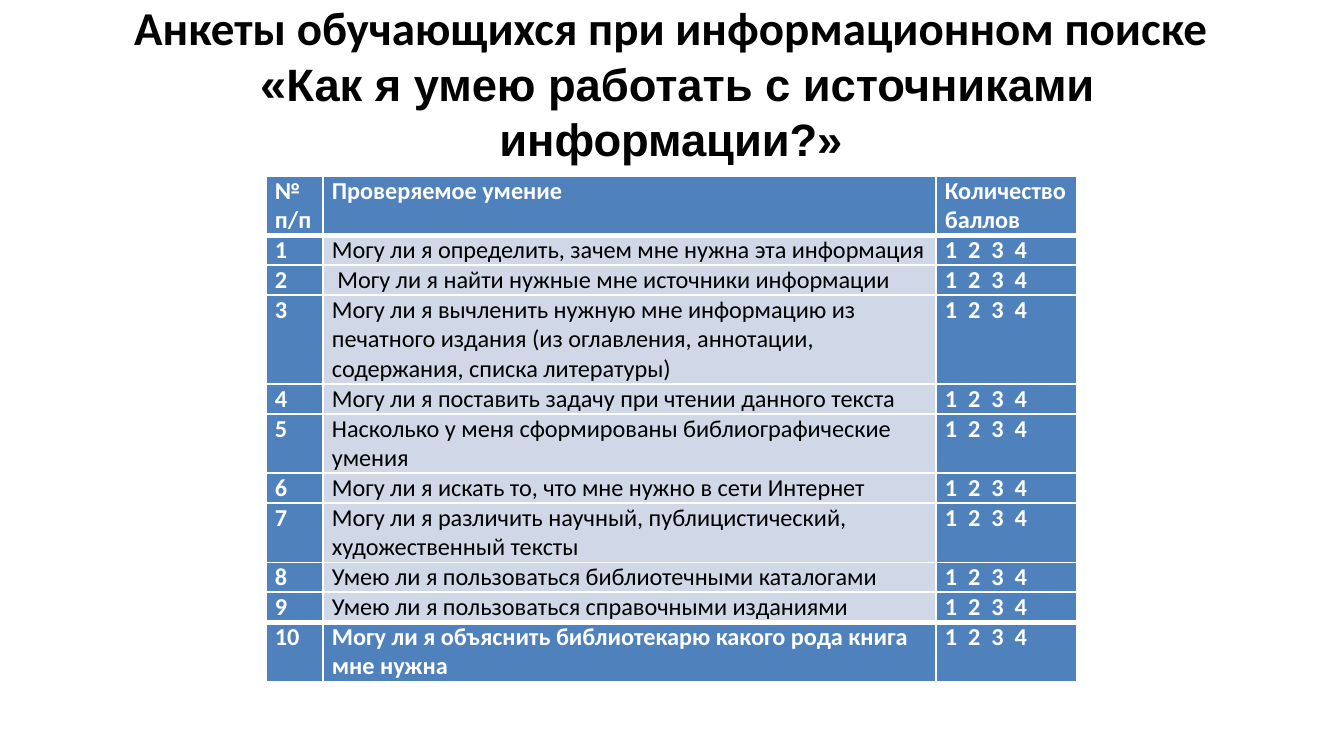
import copy

import pptx
import pptx.dml.color
import pptx.enum.text
import pptx.oxml
import pptx.oxml.ns
import pptx.util

HEADING = "Анкеты обучающихся при информационном поиске"
OPENING_QUOTE = " «"
QUESTION = "Как я умею работать с источниками информации?»"

HEADER = ("№ п/п", "Проверяемое умение", "Количество баллов")
SCORES = "1  2  3  4"
SKILLS = [
    ("Могу ли я определить, зачем мне нужна эта информация", 1),
    (" Могу ли я найти нужные мне источники информации", 1),
    ("Могу ли я вычленить нужную мне информацию из печатного издания "
     "(из оглавления, аннотации, содержания, списка литературы)", 3),
    ("Могу ли я поставить задачу при чтении данного текста", 1),
    ("Насколько у меня сформированы библиографические умения", 2),
    ("Могу ли я искать то, что мне нужно в сети Интернет", 1),
    ("Могу ли я различить научный, публицистический, художественный тексты", 2),
    ("Умею ли я пользоваться библиотечными каталогами", 1),
    ("Умею ли я пользоваться справочными изданиями", 1),
    ("Могу ли я объяснить библиотекарю какого рода книга мне нужна", 2),
]

BLACK = pptx.dml.color.RGBColor(0x00, 0x00, 0x00)
WHITE = pptx.dml.color.RGBColor(0xFF, 0xFF, 0xFF)
BLUE = pptx.dml.color.RGBColor(0x4F, 0x81, 0xBD)
PALE = pptx.dml.color.RGBColor(0xD0, 0xD8, 0xE8)

PX = 914400 / 134.4
COLUMNS = (57, 613, 141)
LINE_HEIGHT = 29.6
HEADER_LINES = 2


def px(length):
    return pptx.util.Emu(round(length * PX))


def style(run, font, size, color, bold):
    run.font.name = font
    run.font.size = pptx.util.Pt(size)
    run.font.color.rgb = color
    run.font.bold = bold


def add_borders(cell, top, bottom):
    properties = cell._tc.get_or_add_tcPr()
    sides = (("lnL", 1), ("lnR", 1), ("lnT", top), ("lnB", bottom))
    for place, (side, width) in enumerate(sides):
        border = pptx.oxml.parse_xml(
            f'<a:{side} {pptx.oxml.ns.nsdecls("a")} w="{pptx.util.Pt(width)}">'
            f'<a:solidFill><a:srgbClr val="{WHITE}"/></a:solidFill></a:{side}>')
        properties.insert(place, border)


def add_title(slide):
    title = slide.shapes.title
    title.left, title.top, title.width, title.height = map(px, (67, 31, 1208, 153))
    frame = title.text_frame
    frame.auto_size = pptx.enum.text.MSO_AUTO_SIZE.NONE
    frame.vertical_anchor = pptx.enum.text.MSO_ANCHOR.MIDDLE
    frame.margin_bottom = px(58)
    frame.text = HEADING + "\v" + OPENING_QUOTE
    paragraph = frame.paragraphs[0]
    paragraph.alignment = pptx.enum.text.PP_ALIGN.CENTER
    paragraph.add_run().text = QUESTION
    fonts = (("Calibri", 25.2), ("Arial", 25.2), ("Arial", 24.3))
    for run, (font, size) in zip(paragraph.runs, fonts):
        style(run, font, size, BLACK, True)
    line_break = paragraph._p.find(pptx.oxml.ns.qn("a:br"))
    line_break.append(copy.deepcopy(paragraph.runs[0]._r.rPr))


def add_questionnaire(slide):
    rows = [HEADER] + [(str(number), skill, SCORES)
                       for number, (skill, _) in enumerate(SKILLS, 1)]
    heights = [round(lines * LINE_HEIGHT)
               for lines in [HEADER_LINES] + [lines for _, lines in SKILLS]]
    last = len(rows) - 1
    table = slide.shapes.add_table(
        len(rows), len(COLUMNS), px(266), px(176),
        px(sum(COLUMNS)), px(sum(heights))).table
    table.last_row = True
    table.first_col = True
    table.last_col = True
    for column, width in zip(table.columns, COLUMNS):
        column.width = px(width)
    for r, (texts, height) in enumerate(zip(rows, heights)):
        table.rows[r].height = px(height)
        for c, text in enumerate(texts):
            cell = table.cell(r, c)
            plain = c == 1 and 0 < r < last
            cell.margin_left = cell.margin_right = px(9)
            cell.margin_top = cell.margin_bottom = 0
            cell.fill.solid()
            cell.fill.fore_color.rgb = PALE if plain else BLUE
            add_borders(cell, 3 if r in (1, last) else 1,
                        3 if r in (0, last - 1) else 1)
            cell.text_frame.text = text
            style(cell.text_frame.paragraphs[0].runs[0], "Calibri", 13,
                  BLACK if plain else WHITE, not plain)


def main():
    presentation = pptx.Presentation()
    presentation.slide_width = px(1344)
    presentation.slide_height = px(756)
    slide = presentation.slides.add_slide(presentation.slide_layouts[5])
    add_title(slide)
    add_questionnaire(slide)
    presentation.save("out.pptx")


if __name__ == "__main__":
    main()
